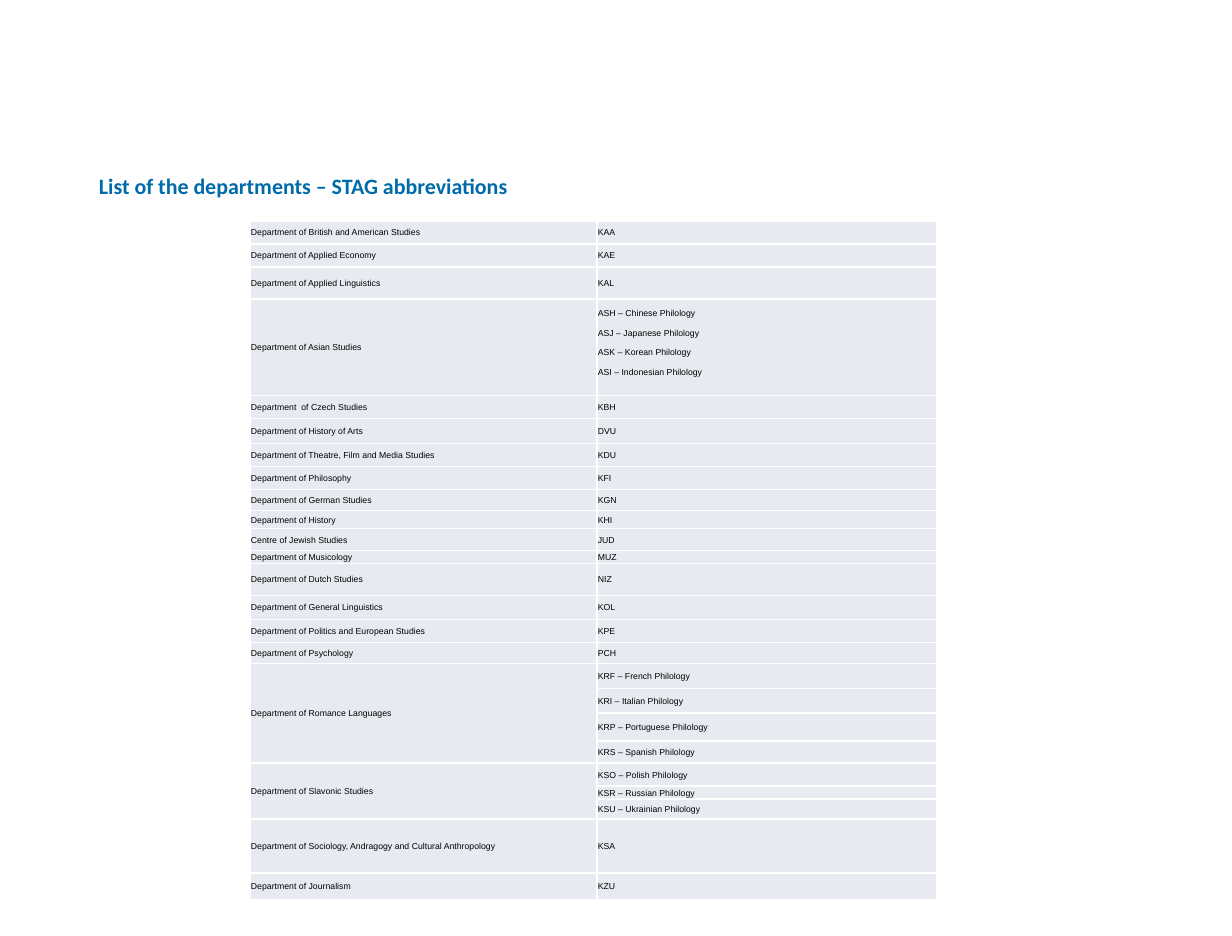
from lxml import etree
from pptx import Presentation, util as u
from pptx.dml.color import RGBColor
from pptx.enum import text
from pptx.oxml.ns import qn

PX = 7303.5
HUES = {"title": "006BAB", "ink": "000000", "cell": "E7EBF1", "rule": "FFFFFF"}
COLS = (347, 340)
ROWS = [
    (23, "Department of British and American Studies", "KAA"),
    (23, "Department of Applied Economy", "KAE"),
    (32, "Department of Applied Linguistics", "KAL"),
    (97, "Department of Asian Studies",
     "ASH – Chinese Philology\nASJ – Japanese Philology\n"
     "ASK – Korean Philology\nASI – Indonesian Philology"),
    (23, "Department  of Czech Studies", "KBH"),
    (25, "Department of History of Arts", "DVU"),
    (23, "Department of Theatre, Film and Media Studies", "KDU"),
    (23, "Department of Philosophy", "KFI"),
    (21, "Department of German Studies", "KGN"),
    (18, "Department of History", "KHI"),
    (22, "Centre of Jewish Studies", "JUD"),
    (13, "Department of Musicology", "MUZ"),
    (32, "Department of Dutch Studies", "NIZ"),
    (24, "Department of General Linguistics", "KOL"),
    (23, "Department of Politics and European Studies", "KPE"),
    (21, "Department of Psychology", "PCH"),
    (25, "Department of Romance Languages", "KRF – French Philology"),
    (25, "", "KRI – Italian Philology"),
    (28, "", "KRP – Portuguese Philology"),
    (22, "", "KRS – Spanish Philology"),
    (23, "Department of Slavonic Studies", "KSO – Polish Philology"),
    (13, "", "KSR – Russian Philology"),
    (20, "", "KSU – Ukrainian Philology"),
    (54, "Department of Sociology, Andragogy and Cultural Anthropology", "KSA"),
    (27, "Department of Journalism", "KZU"),
]


def px(n):
    """Turn pixels into EMU."""
    return u.Emu(round(n * PX))


def style(par, face, size, hue, bold=False):
    """Format every run of a paragraph."""
    for run in par.runs:
        font = run.font
        font.name, font.size, font.bold = face, u.Pt(size), bold
        font.color.rgb = RGBColor.from_string(HUES[hue])


def edge(cell):
    """Draw thin rules on all four sides of a cell."""
    props = cell._tc.get_or_add_tcPr()
    for side in ("lnL", "lnR", "lnT", "lnB"):
        line = etree.SubElement(props, qn("a:" + side), w=str(u.Pt(1)))
        fill = etree.SubElement(line, qn("a:solidFill"))
        etree.SubElement(fill, qn("a:srgbClr"), val=HUES["rule"])


def fill_cell(cell, words):
    """Write and format one table cell."""
    cell.text_frame.text = words
    pars = cell.text_frame.paragraphs
    cell.vertical_anchor = text.MSO_ANCHOR.MIDDLE
    cell.margin_left = cell.margin_right = cell.margin_top = px(1)
    cell.margin_bottom = px(10 if len(pars) > 1 else 0)
    edge(cell)
    cell.fill.solid()
    cell.fill.fore_color.rgb = RGBColor.from_string(HUES["cell"])
    for par in pars:
        style(par, "Arial", 5, "ink")
    for par in pars[1:]:
        par.space_before = u.Pt(5.6)


def add_title(slide, x, y, w, h):
    """Place the heading in its box."""
    frame = slide.shapes.add_textbox(px(x), px(y), px(w), px(h)).text_frame
    frame.word_wrap = True
    frame.margin_left = frame.margin_right = 0
    frame.margin_top = frame.margin_bottom = 0
    frame.text = "List of the departments – STAG abbreviations"
    par = frame.paragraphs[0]
    par.line_spacing = 0.9
    style(par, "Calibri", 12.6, "title", True)


def add_list(slide, x, y):
    """Place the table of departments with its top left corner at x, y."""
    high = sum(row[0] for row in ROWS)
    table = slide.shapes.add_table(
        len(ROWS), len(COLS), px(x), px(y), px(sum(COLS)), px(high)).table
    table.first_row = table.horz_banding = False
    for col, wide in zip(table.columns, COLS):
        col.width = px(wide)
    first = 0
    for i, (tall, *words) in enumerate(ROWS):
        table.rows[i].height = px(tall)
        for j, word in enumerate(words):
            fill_cell(table.cell(i, j), word)
        if words[0]:
            first = i
        last = i + 1 == len(ROWS) or ROWS[i + 1][1]
        if last and i > first:
            table.cell(first, 0).merge(table.cell(i, 0))


def main():
    """Build and save the slide."""
    deck = Presentation()
    deck.slide_width, deck.slide_height = u.Cm(25), u.Cm(19)
    slide = deck.slides.add_slide(deck.slide_layouts[6])
    add_title(slide, 99, 176, 1035, 66)
    add_list(slide, 250, 221)
    deck.save("out.pptx")


if __name__ == "__main__":
    main()
